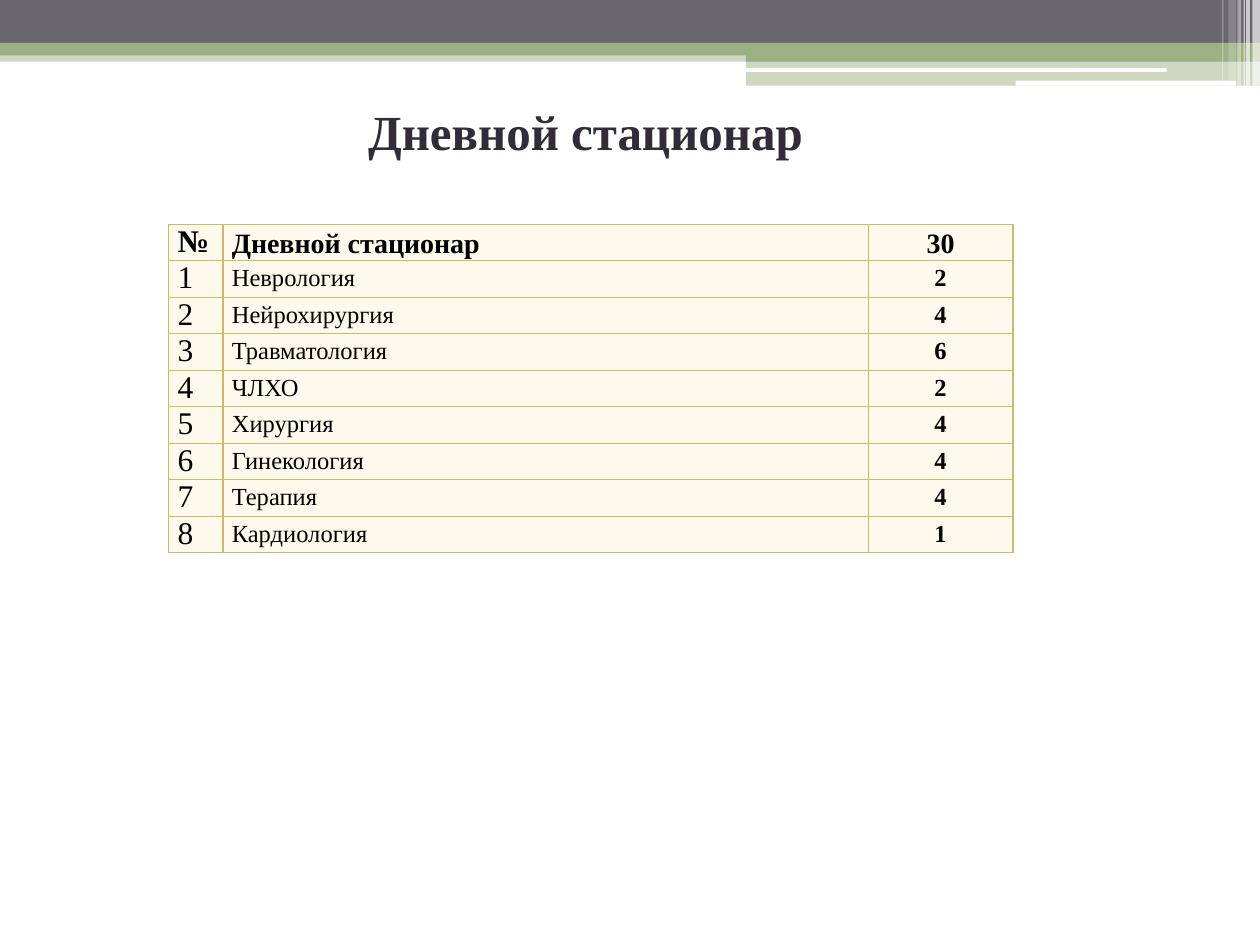
from lxml import etree
from pptx import Presentation
from pptx import util as u
from pptx.dml.color import RGBColor
from pptx.enum import shapes, text
from pptx.oxml import ns

PX = 9144  # 100 px to the inch
FONT = "Times New Roman"
WHITE = RGBColor(0xFF, 0xFF, 0xFF)
BLACK = RGBColor(0, 0, 0)
GREY = RGBColor(0x69, 0x67, 0x6D)
GREEN = RGBColor(0x9C, 0xB0, 0x84)
PLUM = RGBColor(0x32, 0x2B, 0x39)
GOLD = RGBColor(0xCE, 0xB9, 0x66)
CREAM = RGBColor(0xFD, 0xF9, 0xEC)

RECT = shapes.MSO_SHAPE.RECTANGLE
ROUND = shapes.MSO_SHAPE.ROUNDED_RECTANGLE
# kind, left, top, width, height, colour, opacity in percent
BANDS = [
    (RECT, 0, 40, 1000, 9, GREEN, 50),
    (RECT, 0, 0, 1000, 34, GREY, 100),
    (RECT, 0, 34, 1000, 10, GREEN, 100),
    (RECT, 592, 39, 408, 10, GREEN, 100),
    (RECT, 592, 48, 408, 20, GREEN, 50),
    (ROUND, 591, 54, 335, 3, WHITE, 100),
    (ROUND, 806, 64, 175, 4, WHITE, 100),
]
# left, width, height, opacity in percent
STRIPES = [
    (994, 6, 68, 65), (989, 3, 68, 65), (987, 1, 68, 60),
    (982, 3, 68, 40), (975, 6, 64, 20), (970, 1, 64, 30),
]
BEDS = [
    ("№", "Дневной стационар", 30),
    (1, "Неврология", 2),
    (2, "Нейрохирургия", 4),
    (3, "Травматология", 6),
    (4, "ЧЛХО", 2),
    (5, "Хирургия", 4),
    (6, "Гинекология", 4),
    (7, "Терапия", 4),
    (8, "Кардиология", 1),
]
COLUMNS = (43, 512, 115)


def assign(target, values):
    for key, value in values.items():
        setattr(target, key, value)


def write(paragraph, words, size, bold, colour):
    run = paragraph.add_run()
    run.text = words
    assign(run.font, {"name": FONT, "size": u.Pt(size), "bold": bold})
    run.font.color.rgb = colour


def add_band(slide, kind, left, top, width, height, colour, opacity):
    band = slide.shapes.add_shape(
        kind, left * PX, top * PX, width * PX, height * PX)
    band.shadow.inherit = False
    band.line.fill.background()
    band.fill.solid()
    band.fill.fore_color.rgb = colour
    if opacity < 100:
        tint = band.fill._xPr.find(".//" + ns.qn("a:srgbClr"))
        etree.SubElement(tint, ns.qn("a:alpha"), val=str(opacity * 1000))


def add_header(slide, left, top):
    for kind, x, y, width, height, colour, opacity in BANDS:
        add_band(slide, kind, left + x, top + y, width, height, colour, opacity)
    for x, width, height, opacity in STRIPES:
        add_band(slide, RECT, left + x, top, width, height, WHITE, opacity)


def add_title(slide, left, top, width, height):
    title = slide.shapes.add_textbox(
        left * PX, top * PX, width * PX, height * PX)
    assign(title.text_frame, {
        "word_wrap": False,
        "auto_size": text.MSO_AUTO_SIZE.SHAPE_TO_FIT_TEXT,
    })
    heading = title.text_frame.paragraphs[0]
    heading.alignment = text.PP_ALIGN.CENTER
    write(heading, "Дневной стационар ", 28, True, PLUM)


def add_borders(cell):
    """Rule all four sides; borders must precede the fill in the XML."""
    properties = cell._tc.get_or_add_tcPr()
    for index, side in enumerate(("lnL", "lnR", "lnT", "lnB")):
        line = etree.Element(ns.qn("a:" + side), w=str(u.Pt(0.75)))
        fill = etree.SubElement(line, ns.qn("a:solidFill"))
        etree.SubElement(fill, ns.qn("a:srgbClr"), val=str(GOLD))
        properties.insert(index, line)


def add_beds_table(slide, left, top, row_height):
    table = slide.shapes.add_table(
        len(BEDS), len(COLUMNS), left * PX, top * PX,
        sum(COLUMNS) * PX, len(BEDS) * row_height * PX).table
    for column, width in zip(table.columns, COLUMNS):
        column.width = width * PX
    for row, values in enumerate(BEDS):
        table.rows[row].height = row_height * PX
        header = row == 0
        body_size = 16 if header else 14
        for col, value in enumerate(values):
            cell = table.cell(row, col)
            assign(cell, {
                "margin_left": 7 * PX, "margin_right": 7 * PX,
                "margin_top": 0, "margin_bottom": 0,
            })
            cell.fill.solid()
            cell.fill.fore_color.rgb = CREAM
            add_borders(cell)
            entry = cell.text_frame.paragraphs[0]
            if col > 0:
                entry.line_spacing = 1.15
            if col == 2:
                entry.alignment = text.PP_ALIGN.CENTER
            write(entry, str(value), body_size if col else 18,
                  header or col == 2, BLACK)


def main():
    deck = Presentation()
    assign(deck, {"slide_width": 1000 * PX, "slide_height": 750 * PX})
    slide = deck.slides.add_slide(deck.slide_layouts[6])
    add_header(slide, 0, 0)
    add_beds_table(slide, 134, 178, 29)
    add_title(slide, 280, 76, 379, 57)
    deck.save("out.pptx")


if __name__ == "__main__":
    main()
